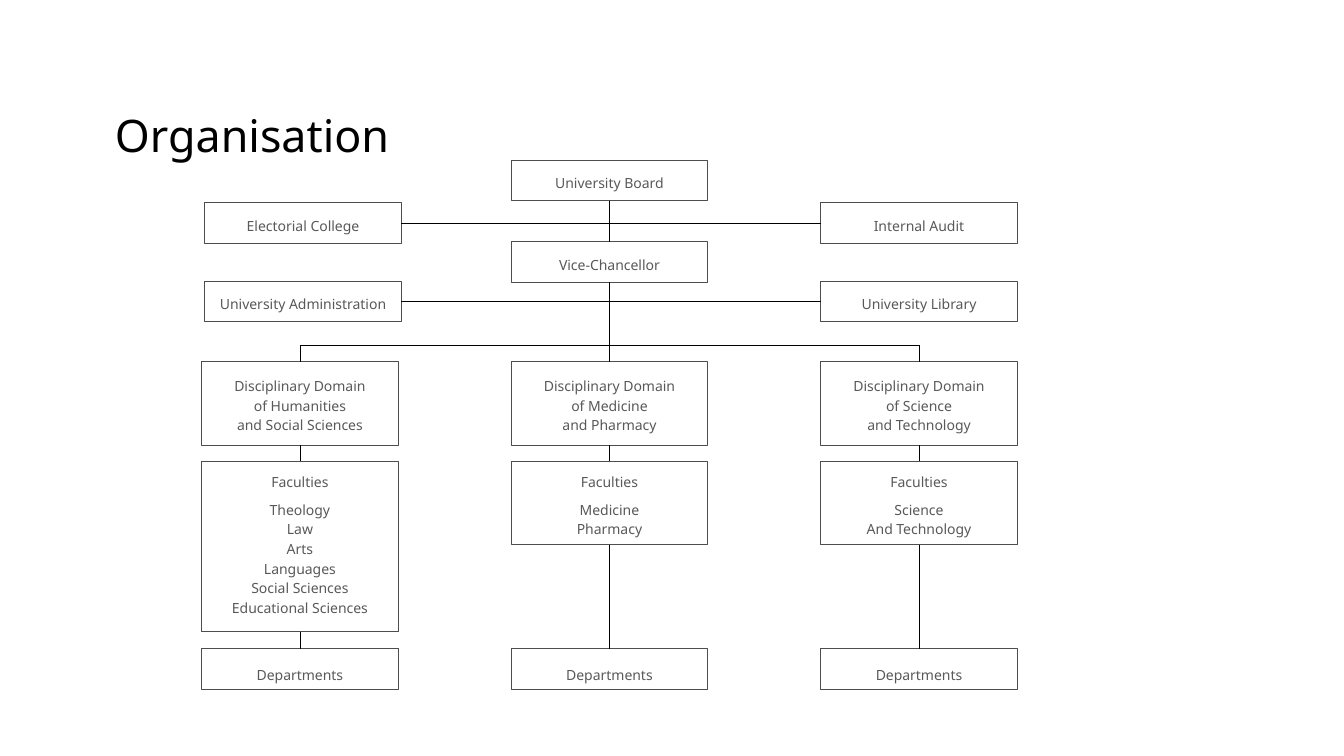
from lxml import etree
from pptx import Presentation, util as u
from pptx.dml.color import RGBColor
from pptx.enum import shapes, text
from pptx.oxml.ns import qn

BLACK = RGBColor(0x00, 0x00, 0x00)
TEXT_GREY = RGBColor(0x59, 0x59, 0x59)
LINE_GREY = RGBColor(0x4D, 0x4D, 0x4D)
FONT = "Noto Sans"
TOP, LEFT, BOTTOM, RIGHT = range(4)

# Vertical places on the chart's grid of 13 rows
GRID_ROWS = 13
BOARD, OFFICES, CHANCELLOR, SERVICES = 0, 1.04, 2, 2.97
BRANCH, DOMAINS, FACULTIES, DEPARTMENTS = 4.55, 4.95, 7.4, 12
TALL = 2.05

# Domain lines, faculties, rows taken by the faculties box
BRANCHES = [
    (["Disciplinary Domain", "of Humanities", "and Social Sciences"],
     ["Theology", "Law", "Arts", "Languages", "Social Sciences",
      "Educational Sciences"], 4.18),
    (["Disciplinary Domain", "of Medicine", "and Pharmacy"],
     ["Medicine", "Pharmacy"], TALL),
    (["Disciplinary Domain", "of Science", "and Technology"],
     ["Science", "And Technology"], TALL),
]


def write(tf, lines, size=10, color=TEXT_GREY, align=text.PP_ALIGN.CENTER,
          leading=14, first_gap=0, anchor=text.MSO_ANCHOR.TOP,
          inset_top=0.05):
    tf.word_wrap = True
    tf.auto_size = text.MSO_AUTO_SIZE.NONE
    tf.vertical_anchor = anchor
    tf.margin_left = tf.margin_right = u.Inches(0.1)
    tf.margin_top, tf.margin_bottom = u.Inches(inset_top), u.Inches(0.05)
    for i, line in enumerate(lines):
        p = tf.paragraphs[0] if i == 0 else tf.add_paragraph()
        p.alignment = align
        p.line_spacing = u.Pt(leading)
        p.space_before = u.Pt(0)
        p.space_after = u.Pt(0 if i else first_gap)
        r = p.add_run()
        r.text = line
        r.font.name, r.font.size = FONT, u.Pt(size)
        r.font.color.rgb = color


def add_title(slide, left, top, width, height):
    sp = slide.shapes.title
    sp.left, sp.top, sp.width, sp.height = map(
        u.Inches, (left, top, width, height))
    write(sp.text_frame, ["Organisation"], size=32, color=BLACK,
          align=text.PP_ALIGN.LEFT, leading=38.4, inset_top=0.12,
          anchor=text.MSO_ANCHOR.MIDDLE)


def add_line(slide, start=(0, 0), end=(0, 0), begin=None, finish=None):
    """Draw a line between points, or join it to (shape, side) pairs."""
    c = slide.shapes.add_connector(
        shapes.MSO_CONNECTOR.STRAIGHT, *map(u.Inches, (*start, *end)))
    if begin:
        c.begin_connect(*begin)
    if finish:
        c.end_connect(*finish)
    c.line.color.rgb, c.line.width = BLACK, u.Pt(0.5)
    etree.SubElement(c._element.spPr, qn("a:effectLst"))
    return c


def add_org_chart(slide, left, top, width, height):
    row = height / GRID_ROWS
    box_width = width * 0.241
    pitch = (width - box_width) / 2

    def unit(lines, col, at, rows=1, **fmt):
        sp = slide.shapes.add_shape(
            shapes.MSO_SHAPE.RECTANGLE,
            *map(u.Inches, (left + col * pitch, top + at * row,
                            box_width, rows * row)))
        sp.shadow.inherit = False
        sp.fill.background()
        sp.line.color.rgb, sp.line.width = LINE_GREY, u.Pt(0.75)
        write(sp.text_frame, lines, **fmt)
        return sp

    def office(name, col, at, inset_top=0.06):
        return unit([name], col, at, leading=18.2, inset_top=inset_top)

    def link(upper, lower, sides=(BOTTOM, TOP)):
        add_line(slide, begin=(upper, sides[0]), finish=(lower, sides[1]))

    board = office("University Board", 1, BOARD)
    chancellor = office("Vice-Chancellor", 1, CHANCELLOR)
    link(board, chancellor)
    for at, left_name, right_name in [
            (OFFICES, "Electorial College", "Internal Audit"),
            (SERVICES, "University Administration", "University Library")]:
        link(office(left_name, 0.01, at), office(right_name, 2, at),
             (RIGHT, LEFT))

    branch_y = top + BRANCH * row
    centers = [left + col * pitch + box_width / 2 for col in range(3)]
    add_line(slide, (centers[0], branch_y), (centers[2], branch_y))

    for col, (domain_lines, faculties, rows) in enumerate(BRANCHES):
        domain = unit(domain_lines, col, DOMAINS, TALL, inset_top=0.13)
        faculty = unit(["Faculties"] + faculties, col, FACULTIES, rows,
                       first_gap=6, inset_top=0.09)
        departments = office("Departments", col, DEPARTMENTS, 0.09)
        if col == 1:
            link(chancellor, domain)
        else:
            add_line(slide, (centers[col], branch_y), finish=(domain, TOP))
        link(domain, faculty)
        link(faculty, departments)


def main():
    prs = Presentation()
    prs.slide_width, prs.slide_height = u.Inches(13.33), u.Inches(7.5)
    slide = prs.slides.add_slide(prs.slide_layouts.get_by_name("Title Only"))
    add_title(slide, 1.04, 0.91, 10.36, 0.78)
    add_org_chart(slide, 2, 1.59, 8.09, 5.25)
    prs.save("out.pptx")


if __name__ == "__main__":
    main()
